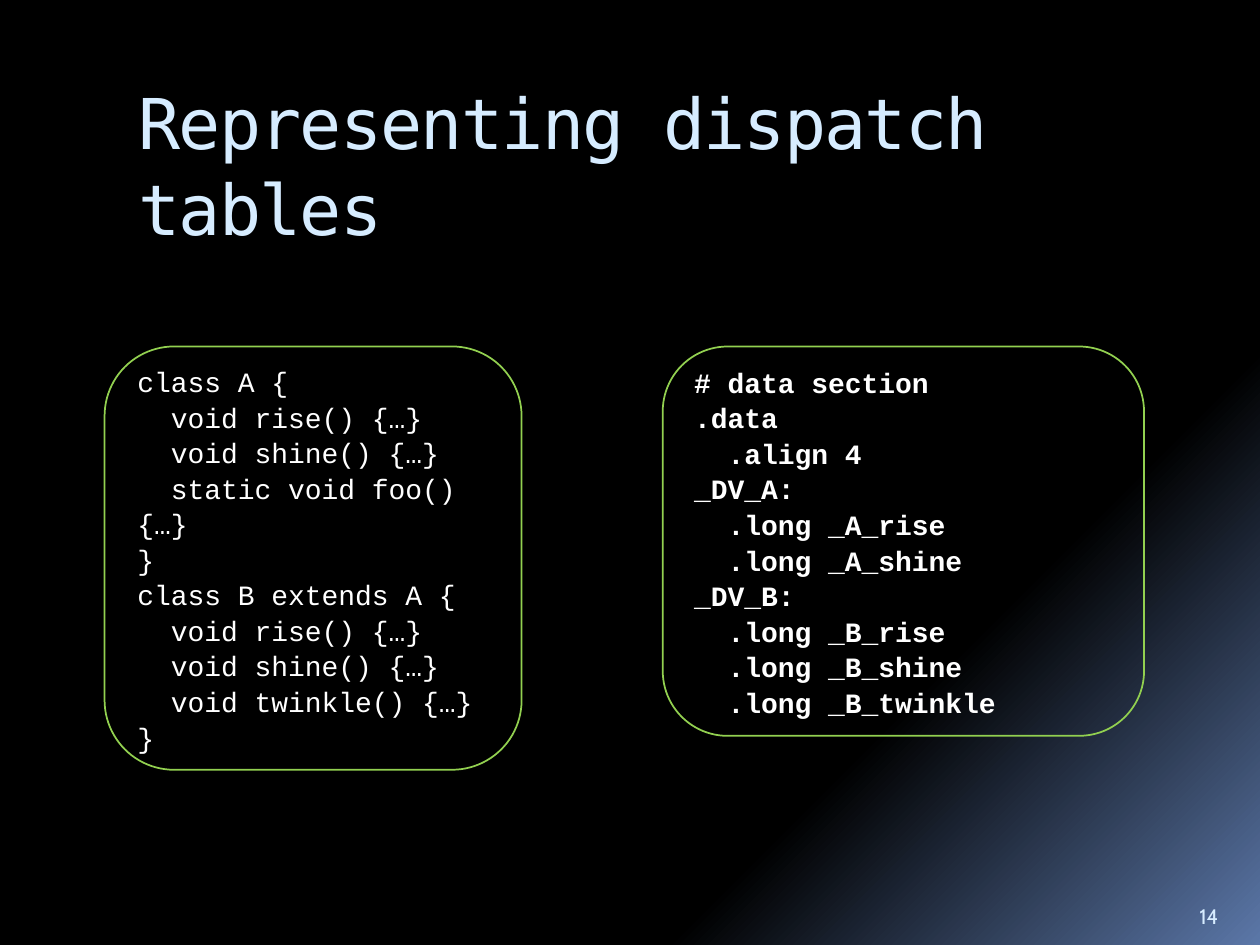
from pptx import Presentation
from pptx.dml.color import RGBColor
from pptx.enum.shapes import MSO_SHAPE
from pptx.enum.text import MSO_ANCHOR, PP_ALIGN
from pptx.util import Inches, Pt

ROUNDED = MSO_SHAPE.ROUNDED_RECTANGLE
TOP, MIDDLE, BOTTOM = MSO_ANCHOR.TOP, MSO_ANCHOR.MIDDLE, MSO_ANCHOR.BOTTOM
LEFT = PP_ALIGN.LEFT

TITLE = "Representing dispatch tables"
PAGE_NUMBER = "14"
CLASSES = """class A {
  void rise() {…}
  void shine() {…}
  static void foo() {…}
}
class B extends A {
  void rise() {…}
  void shine() {…}
  void twinkle() {…}
}"""
ASSEMBLY = """# data section
.data
  .align 4
_DV_A:
  .long _A_rise
  .long _A_shine
_DV_B:
  .long _B_rise
  .long _B_shine
  .long _B_twinkle"""

PALE, WHITE, GREEN = "D6ECFF", "FFFFFF", "92D050"
GRADIENT = [(0.73, "000000"), (1, "5B77A8")]
TITLE_FONT = {"name": "DejaVu Sans Mono", "size": Pt(40)}
NUMBER_FONT = {"name": "Cabin", "size": Pt(12)}
CODE_FONT = {"name": "Courier New", "size": Pt(16)}
CODE_TOP = 2.75
CODE_BOXES = [
    (CLASSES, 0.83, 3.31, 3.36, False),
    (ASSEMBLY, 5.26, 3.82, 3.09, True),
]


def color(value):
    return RGBColor.from_string(value)


def write(shape, text, font, font_color, anchor, line_spacing=1):
    frame = shape.text_frame
    frame.word_wrap = True
    frame.vertical_anchor = anchor
    frame.text = text
    for paragraph in frame.paragraphs:
        paragraph.alignment = LEFT
        paragraph.line_spacing = line_spacing
        for run in paragraph.runs:
            for name, value in font.items():
                setattr(run.font, name, value)
            run.font.color.rgb = color(font_color)


def add_text(slide, box, *content):
    shape = slide.shapes.add_textbox(*map(Inches, box))
    write(shape, *content)
    return shape


def add_code(slide, text, left, width, height, bold):
    box = map(Inches, (left, CODE_TOP, width, height))
    shape = slide.shapes.add_shape(ROUNDED, *box)
    shape.shadow.inherit = False
    shape.fill.background()
    shape.line.color.rgb = color(GREEN)
    shape.line.width = Pt(1)
    write(shape, text, {**CODE_FONT, "bold": bold}, WHITE, MIDDLE, 1.06)


def paint_background(slide):
    fill = slide.background.fill
    fill.gradient()
    fill.gradient_angle = 315
    for stop, (position, value) in zip(fill.gradient_stops, GRADIENT):
        stop.position = position
        stop.color.rgb = color(value)


def main():
    presentation = Presentation()
    presentation.slide_width = Inches(10)
    presentation.slide_height = Inches(7.5)
    slide = presentation.slides.add_slide(presentation.slide_layouts[6])
    paint_background(slide)
    add_text(slide, (9.42, 7.02, 0.5, 0.4), PAGE_NUMBER, NUMBER_FONT, PALE, BOTTOM)
    title = add_text(slide, (1, 0.56, 8.5, 1), TITLE, TITLE_FONT, PALE, TOP, 1.03)
    title.text_frame.paragraphs[0].runs[0].font._element.set("spc", "-100")
    for code_box in CODE_BOXES:
        add_code(slide, *code_box)
    presentation.save("out.pptx")


if __name__ == "__main__":
    main()
